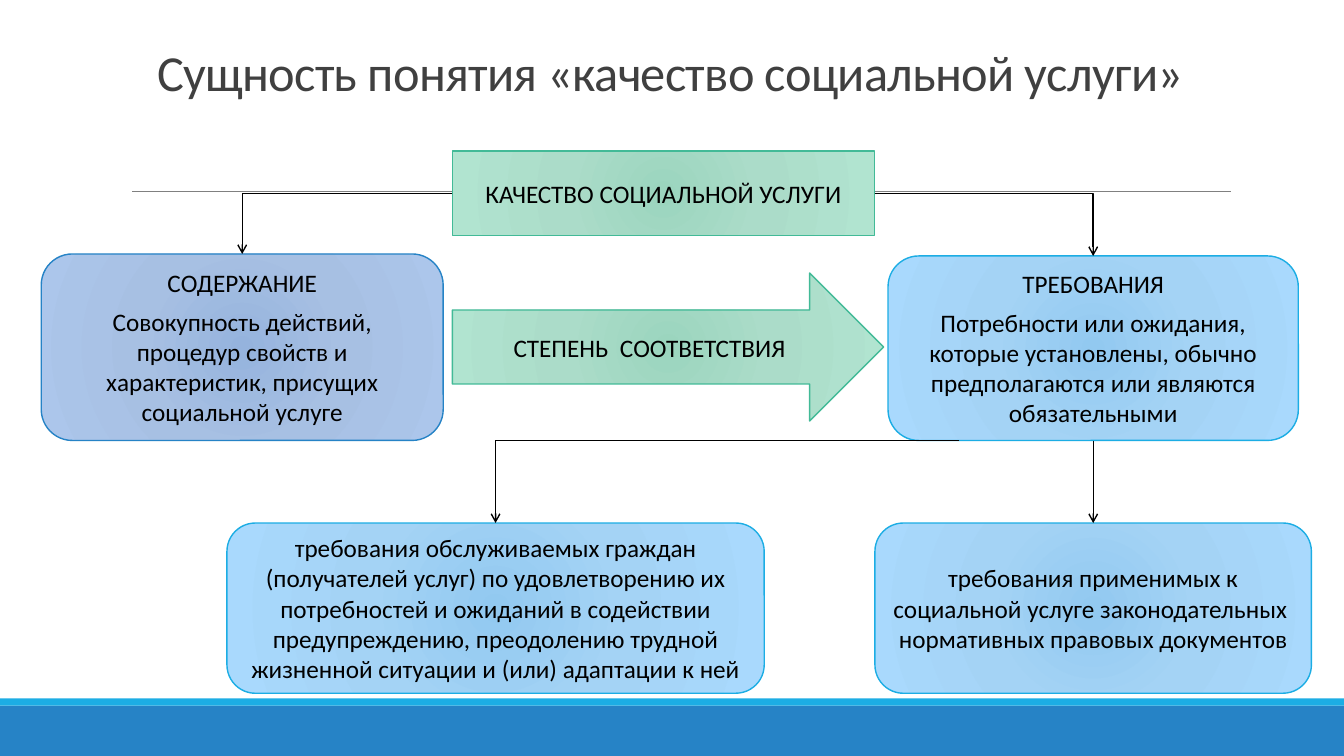
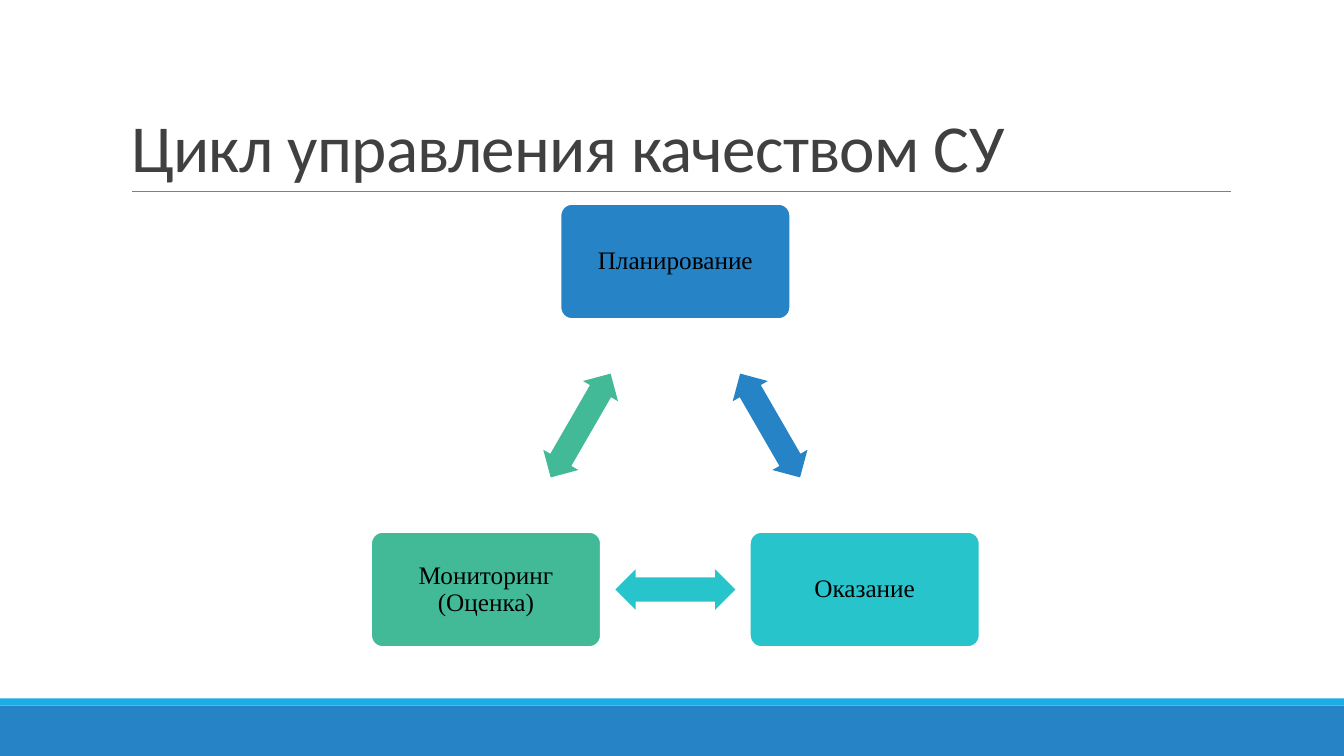
"""Build two slides on the quality of social services."""
import math

import lxml.etree
import pptx
import pptx.dml.color
import pptx.enum.dml
import pptx.enum.shapes
import pptx.enum.text
import pptx.oxml
import pptx.oxml.ns
import pptx.util

Cm = pptx.util.Cm
Pt = pptx.util.Pt
SHAPES = pptx.enum.shapes.MSO_SHAPE
CONNECTORS = pptx.enum.shapes.MSO_CONNECTOR
ALIGN = pptx.enum.text.PP_ALIGN
ANCHOR = pptx.enum.text.MSO_ANCHOR
qn = pptx.oxml.ns.qn

COLORS = {
    "blue": "2683C6", "sky": "1CADE4", "teal": "28C4CC", "green": "42BA97",
    "rule": "808080", "title": "404040", "text": "000000", "white": "FFFFFF",
}
GRADIENTS = {
    "green": ("9BD5BE", "ABDCC9", "B1E4D0"),
    "blue": ("95B3DD", "A7C0E3", "ACC6EB"),
    "sky": ("92C9F0", "A4D3F5", "A9D9FD"),
}
GRADIENT_STOPS = (0, 45, 100)
WIDTH, HEIGHT = 33.87, 19.05
BANDS = [("blue", 17.78, 1.27), ("sky", 17.6, 0.18)]
RULE = (3.33, 4.83, 31.01, 4.83)

BODY_FONT = {"name": "Calibri", "size": Pt(18)}
CYCLE_FONT = {"name": "Times New Roman", "size": Pt(18)}

CONCEPT_TITLE = {
    "text": "Сущность понятия «качество социальной услуги»",
    "area": (1.4, 0.79, 30.99, 1.9),
    "size": 36, "paragraph": {"alignment": ALIGN.CENTER, "line_spacing": 1.0},
}
CYCLE_TITLE = {
    "text": "Цикл управления качеством СУ",
    "area": (3.05, 0.79, 27.94, 4.04),
    "size": 48, "paragraph": {"alignment": ALIGN.LEFT, "line_spacing": 0.85},
}
CONCEPT_BOXES = {
    "quality": (SHAPES.RECTANGLE, "green", (11.4, 3.81, 10.64, 2.13),
                ["КАЧЕСТВО СОЦИАЛЬНОЙ УСЛУГИ"]),
    "content": (SHAPES.ROUNDED_RECTANGLE, "blue", (1.04, 6.4, 10.13, 4.7),
                ["СОДЕРЖАНИЕ",
                 "Совокупность действий, процедур свойств и характеристик, "
                 "присущих социальной услуге"]),
    "requirements": (SHAPES.ROUNDED_RECTANGLE, "sky", (22.38, 6.45, 10.34, 4.65),
                     ["ТРЕБОВАНИЯ",
                      "Потребности или ожидания, которые установлены, обычно "
                      "предполагаются или являются обязательными"]),
    "match": (SHAPES.RIGHT_ARROW, "green", (11.4, 6.88, 10.87, 3.73),
              ["СТЕПЕНЬ  СООТВЕТСТВИЯ"]),
    "citizens": (SHAPES.ROUNDED_RECTANGLE, "sky", (5.72, 13.18, 13.54, 4.29),
                 ["требования обслуживаемых граждан (получателей услуг) по "
                  "удовлетворению их потребностей и ожиданий в содействии "
                  "предупреждению, преодолению трудной жизненной ситуации и "
                  "(или) адаптации к ней"]),
    "law": (SHAPES.ROUNDED_RECTANGLE, "sky", (22.05, 13.18, 11, 4.29),
            ["требования применимых к социальной услуге законодательных  "
             "нормативных правовых документов"]),
}
TOP, LEFT, BOTTOM, RIGHT = range(4)
CONCEPT_LINKS = [
    ("quality", LEFT, "content", CONNECTORS.ELBOW),
    ("quality", RIGHT, "requirements", CONNECTORS.ELBOW),
    ("requirements", BOTTOM, "law", CONNECTORS.STRAIGHT),
]
BRANCH_START = (24.18, 11.1)

CYCLE_STEPS = [("Планирование", "blue"), ("Оказание", "teal"),
               ("Мониторинг (Оценка)", "green")]
CYCLE_CENTER, CYCLE_RADIUS = (17.02, 12.1), 5.51
STEP_SIZE, ARROW_SIZE = (5.79, 2.9), (3.02, 1.02)


def rgb(name):
    """Return the named colour."""
    return pptx.dml.color.RGBColor.from_string(COLORS[name])


def lengths(values):
    """Turn centimetres into lengths."""
    return [Cm(value) for value in values]


def apply(target, values):
    """Set every attribute held in a dict."""
    for name, value in values.items():
        setattr(target, name, value)


def add_block(page, kind, area, fill, line=None, line_width=1):
    """Add a plain filled shape."""
    block = page.shapes.add_shape(kind, *lengths(area))
    block.shadow.inherit = False
    block.fill.solid()
    block.fill.fore_color.rgb = rgb(fill)
    if line:
        block.line.color.rgb = rgb(line)
        block.line.width = Pt(line_width)
    else:
        block.line.fill.background()
    return block


def write(block, texts, font, paragraph_format):
    """Write centred paragraphs into a shape."""
    frame = block.text_frame
    apply(frame, {"word_wrap": True, "vertical_anchor": ANCHOR.MIDDLE})
    for index, text in enumerate(texts):
        para = frame.add_paragraph() if index else frame.paragraphs[0]
        apply(para, {"alignment": ALIGN.CENTER, **paragraph_format})
        if index < len(texts) - 1:
            para.space_after = Pt(6)
        span = para.add_run()
        span.text = text
        apply(span.font, font)
        span.font.color.rgb = rgb("text")


def set_radial_fill(block, name):
    """Replace the solid fill by a radial gradient."""
    stops = "".join(
        f'<a:gs pos="{stop * 1000}"><a:srgbClr val="{color}"/></a:gs>'
        for stop, color in zip(GRADIENT_STOPS, GRADIENTS[name]))
    gradient = pptx.oxml.parse_xml(
        f'<a:gradFill {pptx.oxml.ns.nsdecls("a")} rotWithShape="1">'
        f'<a:gsLst>{stops}</a:gsLst><a:path path="circle">'
        '<a:fillToRect l="50000" t="50000" r="50000" b="50000"/>'
        '</a:path></a:gradFill>')
    properties = block.element.spPr
    properties.replace(properties.find(qn("a:solidFill")), gradient)


def add_line(page, kind, ends, color, width):
    """Add a connector without shadow."""
    line = page.shapes.add_connector(kind, *ends)
    line.line.color.rgb = rgb(color)
    line.line.width = Pt(width)
    lxml.etree.SubElement(line.element.spPr, qn("a:effectLst"))
    return line


def add_arrow(page, kind, start, end):
    """Add a connector with an open arrowhead; elbows turn once."""
    arrow = add_line(page, kind, (*start, *end), "text", 1)
    properties = arrow.element.spPr
    lxml.etree.SubElement(properties.find(qn("a:ln")), qn("a:tailEnd"), type="arrow")
    if kind == CONNECTORS.ELBOW:
        properties.find(qn("a:prstGeom")).set("prst", "bentConnector2")
    return arrow


def side_middle(block, side):
    """Return the middle of one side of a shape."""
    across, down = {TOP: (1, 0), LEFT: (0, 1), BOTTOM: (1, 2), RIGHT: (2, 1)}[side]
    return block.left + block.width * across // 2, block.top + block.height * down // 2


def decorate_layout(layout, page):
    """Move the shared bands and rule to the layout."""
    parts = [add_block(page, SHAPES.RECTANGLE, (0, top, WIDTH, height), fill)
             for fill, top, height in BANDS]
    parts.append(add_line(page, CONNECTORS.STRAIGHT, lengths(RULE), "rule", 0.5))
    for number, part in enumerate(parts, start=100):
        part.element.xpath(".//p:cNvPr")[0].set("id", str(number))
        layout.shapes.element.append(part.element)


def add_title(page, title):
    """Place and format the title placeholder."""
    box = page.shapes.title
    apply(box, dict(zip(("left", "top", "width", "height"), lengths(title["area"]))))
    frame = box.text_frame
    apply(frame, {"word_wrap": True, "vertical_anchor": ANCHOR.BOTTOM,
                  "auto_size": pptx.enum.text.MSO_AUTO_SIZE.NONE})
    para = frame.paragraphs[0]
    apply(para, title["paragraph"])
    span = para.add_run()
    span.text = title["text"]
    apply(span.font, {"name": "Calibri", "size": Pt(title["size"])})
    span.font.color.rgb = rgb("title")
    span.font._element.set("spc", "-50")


def build_concept(page):
    """Draw the diagram of the quality concept."""
    add_title(page, CONCEPT_TITLE)
    boxes = {}
    for name, (kind, color, area, texts) in CONCEPT_BOXES.items():
        boxes[name] = add_block(page, kind, area, color, color)
        set_radial_fill(boxes[name], color)
        write(boxes[name], texts, BODY_FONT, {})
    for source, side, target, kind in CONCEPT_LINKS:
        start, end = boxes[source], boxes[target]
        arrow = add_arrow(page, kind, side_middle(start, side), side_middle(end, TOP))
        arrow.begin_connect(start, side)
        arrow.end_connect(end, TOP)
    branch = add_arrow(page, CONNECTORS.ELBOW, lengths(BRANCH_START),
                       side_middle(boxes["citizens"], TOP))
    branch.end_connect(boxes["citizens"], TOP)


def centered(center, size):
    """Return the area of a given size around a point."""
    return [middle - length / 2 for middle, length in zip(center, size)] + list(size)


def build_cycle(page):
    """Draw the three-step management cycle."""
    add_title(page, CYCLE_TITLE)
    turn = 360 / len(CYCLE_STEPS)

    def cycle_point(degrees, radius):
        angle = math.radians(degrees)
        return (CYCLE_CENTER[0] + radius * math.sin(angle),
                CYCLE_CENTER[1] - radius * math.cos(angle))

    for index, (text, color) in enumerate(CYCLE_STEPS):
        angle = index * turn
        step = add_block(page, SHAPES.ROUNDED_RECTANGLE,
                         centered(cycle_point(angle, CYCLE_RADIUS), STEP_SIZE),
                         color, "white", 1.25)
        step.adjustments[0] = 0.1
        apply(step.text_frame, {f"margin_{side}": Cm(0.18)
                                for side in ("left", "top", "right", "bottom")})
        write(step, [text], CYCLE_FONT, {"line_spacing": 0.9})
        middle = cycle_point(angle + turn / 2, CYCLE_RADIUS * math.cos(math.radians(turn / 2)))
        arrow = add_block(page, SHAPES.LEFT_RIGHT_ARROW, centered(middle, ARROW_SIZE), color)
        arrow.rotation = angle + turn / 2
        arrow.adjustments[0], arrow.adjustments[1] = 0.6, 0.5


def main():
    """Build and save the deck."""
    deck = pptx.Presentation()
    deck.slide_width, deck.slide_height = lengths((WIDTH, HEIGHT))
    layout = deck.slide_layouts.get_by_name("Title Only")
    pages = [deck.slides.add_slide(layout) for _ in range(2)]
    decorate_layout(layout, pages[0])
    build_concept(pages[0])
    build_cycle(pages[1])
    deck.save("out.pptx")


if __name__ == "__main__":
    main()
